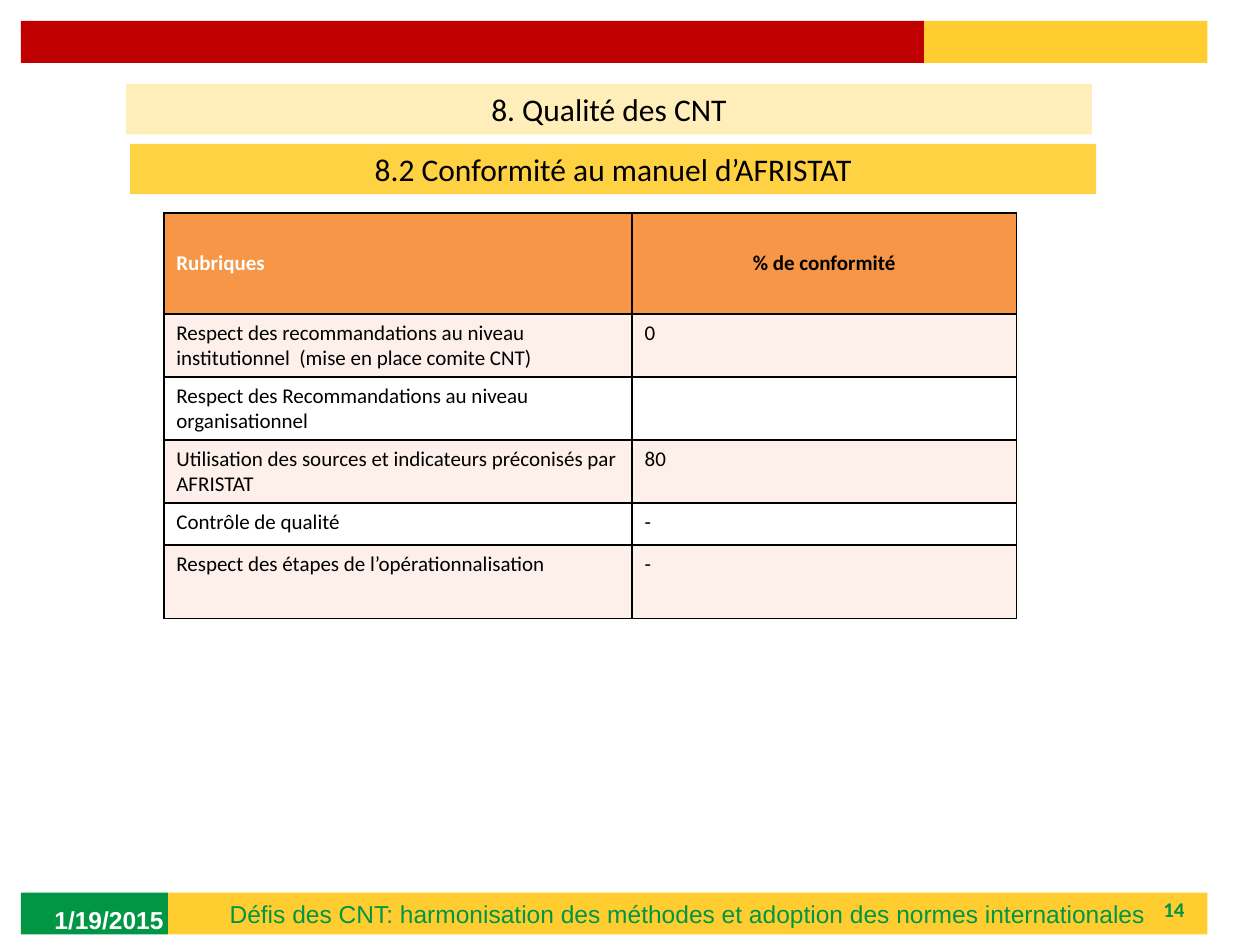
from dataclasses import dataclass
from typing import Optional

from lxml.etree import SubElement
from pptx import Presentation
from pptx.dml.color import RGBColor
from pptx.enum.shapes import MSO_SHAPE
from pptx.enum.text import MSO_ANCHOR, PP_ALIGN
from pptx.oxml.ns import qn
from pptx.util import Inches, Pt

GREEN = RGBColor(0x00, 0x96, 0x44)
YELLOW = RGBColor(0xFF, 0xCD, 0x2F)
GOLD = RGBColor(0xFF, 0xD2, 0x43)
CREAM = RGBColor(0xFF, 0xEE, 0xB9)
RED = RGBColor(0xC0, 0x00, 0x00)
ORANGE = RGBColor(0xF7, 0x96, 0x46)
BLUSH = RGBColor(0xFD, 0xEF, 0xE9)
WHITE = RGBColor(0xFF, 0xFF, 0xFF)
BLACK = RGBColor(0x00, 0x00, 0x00)

GRID = Inches(1) / 12  # the slide is 120 columns by 90 rows


def grid(count: float) -> int:
    return round(count * GRID)


@dataclass
class Area:
    col: float
    row: float
    cols: float
    rows: float

    def lengths(self) -> list[int]:
        return [grid(n) for n in (self.col, self.row, self.cols, self.rows)]


@dataclass
class Label:
    text: str
    size: float
    color: RGBColor = BLACK
    font: str = "Calibri"
    bold: bool = False
    align: PP_ALIGN = PP_ALIGN.LEFT


@dataclass
class Band:
    area: Area
    fill: RGBColor
    label: Optional[Label] = None


def write(frame, label: Label, anchor: MSO_ANCHOR = MSO_ANCHOR.MIDDLE) -> None:
    frame.text = label.text
    frame.word_wrap = True
    frame.vertical_anchor = anchor
    paragraph = frame.paragraphs[0]
    paragraph.alignment = label.align
    font = paragraph.font
    if paragraph.runs:
        font = paragraph.runs[0].font
    font.name, font.size, font.bold = label.font, Pt(label.size), label.bold
    font.color.rgb = label.color


def draw_band(slide, band: Band) -> None:
    bar = slide.shapes.add_shape(MSO_SHAPE.RECTANGLE, *band.area.lengths())
    bar.shadow.inherit = False
    bar.fill.solid()
    bar.fill.fore_color.rgb = band.fill
    bar.line.fill.background()
    if band.label:
        write(bar.text_frame, band.label)


def draw_note(slide, area: Area, label: Label) -> None:
    write(slide.shapes.add_textbox(*area.lengths()).text_frame, label)


def outline(cell, color: RGBColor) -> None:
    properties = cell._tc.get_or_add_tcPr()
    for position, side in enumerate(("a:lnL", "a:lnR", "a:lnT", "a:lnB")):
        border = properties.makeelement(qn(side), {"w": str(Pt(1))})
        fill = SubElement(border, qn("a:solidFill"))
        SubElement(fill, qn("a:srgbClr"), val=str(color))
        properties.insert(position, border)


def draw_table(slide, area: Area, widths: list[float], heights: list[float],
               rows: list[tuple[str, str]]) -> None:
    table = slide.shapes.add_table(len(rows), len(widths), *area.lengths()).table
    for column, width in zip(table.columns, widths):
        column.width = grid(width)
    for r, (height, texts) in enumerate(zip(heights, rows)):
        table.rows[r].height = grid(height)
        header = r == 0
        for c, text in enumerate(texts):
            cell = table.cell(r, c)
            cell.fill.solid()
            cell.fill.fore_color.rgb = ORANGE if header else BLUSH if r % 2 else WHITE
            label = Label(text, 12, WHITE if header and c == 0 else BLACK, bold=header,
                          align=PP_ALIGN.CENTER if header and c else PP_ALIGN.LEFT)
            anchor = MSO_ANCHOR.MIDDLE if header else MSO_ANCHOR.TOP
            write(cell.text_frame, label)
            cell.vertical_anchor = anchor
            outline(cell, BLACK)


FRAME_BANDS = [
    Band(Area(2, 85, 14, 4), GREEN),
    Band(Area(16, 85, 99, 4), YELLOW,
         Label("Défis des CNT: harmonisation des méthodes et adoption des normes internationales",
               14, GREEN, "Arial", align=PP_ALIGN.CENTER)),
    Band(Area(2, 2, 86, 4), RED),
    Band(Area(88, 2, 27, 4), YELLOW),
]
SUBTITLE = Band(Area(12.4, 13.7, 92, 4.8), GOLD,
                Label("8.2 Conformité au manuel d’AFRISTAT", 18, align=PP_ALIGN.CENTER))

COLUMN_WIDTHS = [44.6, 36.6]
ROW_HEIGHTS = [9.6, 6, 6, 6, 4, 7]
CONFORMITY = [
    ("Rubriques", "% de conformité"),
    ("Respect des recommandations au niveau institutionnel  (mise en place comite CNT)", "0"),
    ("Respect des Recommandations au niveau organisationnel", ""),
    ("Utilisation des sources et indicateurs préconisés par AFRISTAT", "80"),
    ("Contrôle de qualité", "-"),
    ("Respect des étapes de l’opérationnalisation", "-"),
]


def main() -> None:
    deck = Presentation()
    deck.slide_width, deck.slide_height = grid(120), grid(90)
    slide = deck.slides.add_slide(deck.slide_layouts[5])

    # Header and footer bands, with slide number and date
    for band in FRAME_BANDS:
        draw_band(slide, band)
    draw_note(slide, Area(86, 85, 28, 3.2),
              Label("14", 12, GREEN, bold=True, align=PP_ALIGN.RIGHT))
    draw_note(slide, Area(4, 85.2, 28, 4.8),
              Label("1/19/2015", 14, WHITE, "Arial", bold=True))

    # Section title
    title = slide.shapes.title
    title.left, title.top, title.width, title.height = Area(12, 8, 92, 4.8).lengths()
    title.fill.solid()
    title.fill.fore_color.rgb = CREAM
    write(title.text_frame, Label("8. Qualité des CNT", 18, align=PP_ALIGN.CENTER))

    # Conformity table under its subtitle
    draw_table(slide, Area(15.6, 20.3, sum(COLUMN_WIDTHS), sum(ROW_HEIGHTS)),
               COLUMN_WIDTHS, ROW_HEIGHTS, CONFORMITY)
    draw_band(slide, SUBTITLE)

    deck.save("out.pptx")


if __name__ == "__main__":
    main()
